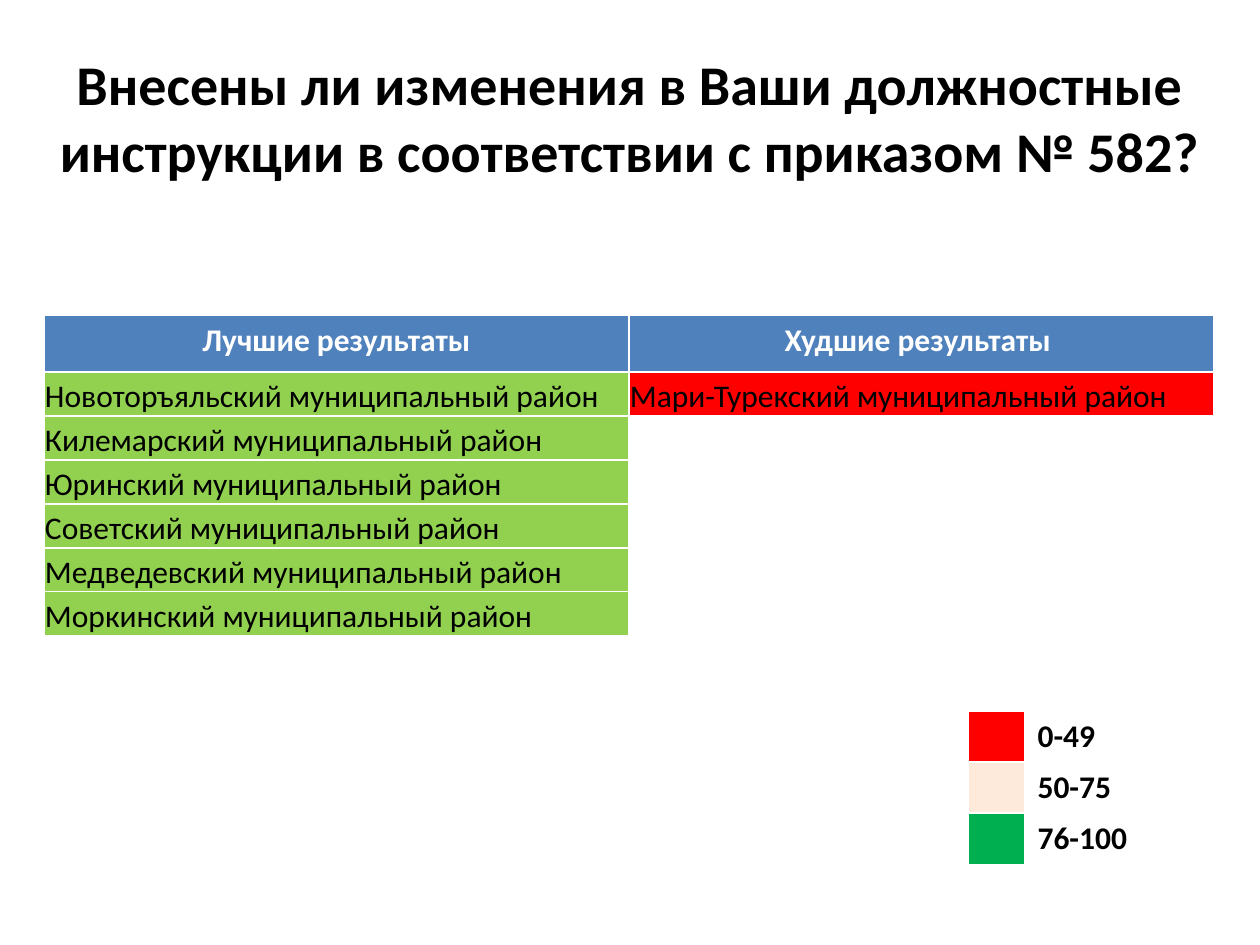
from dataclasses import dataclass

from pptx import Presentation
from pptx import util as u
from pptx.dml.color import RGBColor
from pptx.enum import text


@dataclass(frozen=True)
class Theme:
    """Colours, font and type sizes of the slide."""
    font: str = "Calibri"
    title_size: int = 32
    table_size: int = 18
    ink: str = "000000"
    paper: str = "FFFFFF"
    header: str = "4F81BD"
    best: str = "92D050"
    low: str = "FF0000"
    middle: str = "FDEADA"
    high: str = "00B050"


THEME = Theme()
CENTER = text.PP_ALIGN.CENTER
LEFT = text.PP_ALIGN.LEFT
BEST = ["Новоторъяльский", "Килемарский", "Юринский",
        "Советский", "Медведевский", "Моркинский"]
WORST = ["Мари-Турекский"]
LEGEND = [("0-49", THEME.low), ("50-75", THEME.middle), ("76-100", THEME.high)]


def px(length):
    """Turn slide pixels into EMU."""
    return u.Emu(round(length * 914400 / 126))


def write(frame, words, size, color, bold, align):
    """Put one formatted paragraph into a text frame."""
    para = frame.paragraphs[0]
    para.text = words
    para.alignment = align
    for span in para.runs:
        span.font.name = THEME.font
        span.font.size = u.Pt(size)
        span.font.bold = bold
        span.font.color.rgb = RGBColor.from_string(color)


def add_title(page, words):
    """Place and fill the title placeholder."""
    title = page.shapes.title
    title.left, title.top, title.width, title.height = map(px, (0, 38, 1260, 158))
    title.text_frame.word_wrap = True
    title.text_frame.vertical_anchor = text.MSO_ANCHOR.MIDDLE
    write(title.text_frame, words, THEME.title_size, THEME.ink, True, CENTER)


def add_grid(page, left, top, widths, heights):
    """Add a table with the given column widths and row heights."""
    table = page.shapes.add_table(len(heights), len(widths), px(left), px(top),
                                  px(sum(widths)), px(sum(heights))).table
    for column, width in zip(table.columns, widths):
        column.width = px(width)
    for row, height in zip(table.rows, heights):
        row.height = px(height)
    return table


def fill_cell(cell, words, fill, color=THEME.ink, bold=False, align=LEFT):
    """Colour a cell and write its words, if it has any."""
    if fill:
        cell.fill.solid()
        cell.fill.fore_color.rgb = RGBColor.from_string(fill)
    else:
        cell.fill.background()
    if words:
        write(cell.text_frame, words, THEME.table_size, color, bold, align)


def add_results(page):
    """Add the table of best and worst districts."""
    table = add_grid(page, 44, 315, [585, 585], [57] + [44] * len(BEST))
    columns = [("Лучшие результаты", BEST, THEME.best),
               ("Худшие результаты ", WORST, THEME.low)]
    for index, (heading, districts, fill) in enumerate(columns):
        fill_cell(table.cell(0, index), heading, THEME.header, THEME.paper, True, CENTER)
        for row in range(1, len(BEST) + 1):
            cell = table.cell(row, index)
            cell.margin_left = cell.margin_right = cell.margin_top = px(1)
            cell.margin_bottom = 0
            cell.vertical_anchor = text.MSO_ANCHOR.BOTTOM
            if row <= len(districts):
                fill_cell(cell, f"{districts[row - 1]} муниципальный район", fill)
            else:
                fill_cell(cell, "", None)


def add_legend(page):
    """Add the colour key for the score ranges."""
    table = add_grid(page, 968, 711, [57, 202], [51] * len(LEGEND))
    for row, (label, color) in enumerate(LEGEND):
        fill_cell(table.cell(row, 0), "", color)
        fill_cell(table.cell(row, 1), label, THEME.paper, bold=True)


def main():
    """Build and save the slide."""
    deck = Presentation()
    deck.slide_width, deck.slide_height = px(1260), px(945)
    page = deck.slides.add_slide(deck.slide_layouts[5])
    add_title(page, "Внесены ли изменения в Ваши должностные инструкции "
                    "в соответствии с приказом № 582?")
    add_results(page)
    add_legend(page)
    deck.save("out.pptx")


if __name__ == "__main__":
    main()
